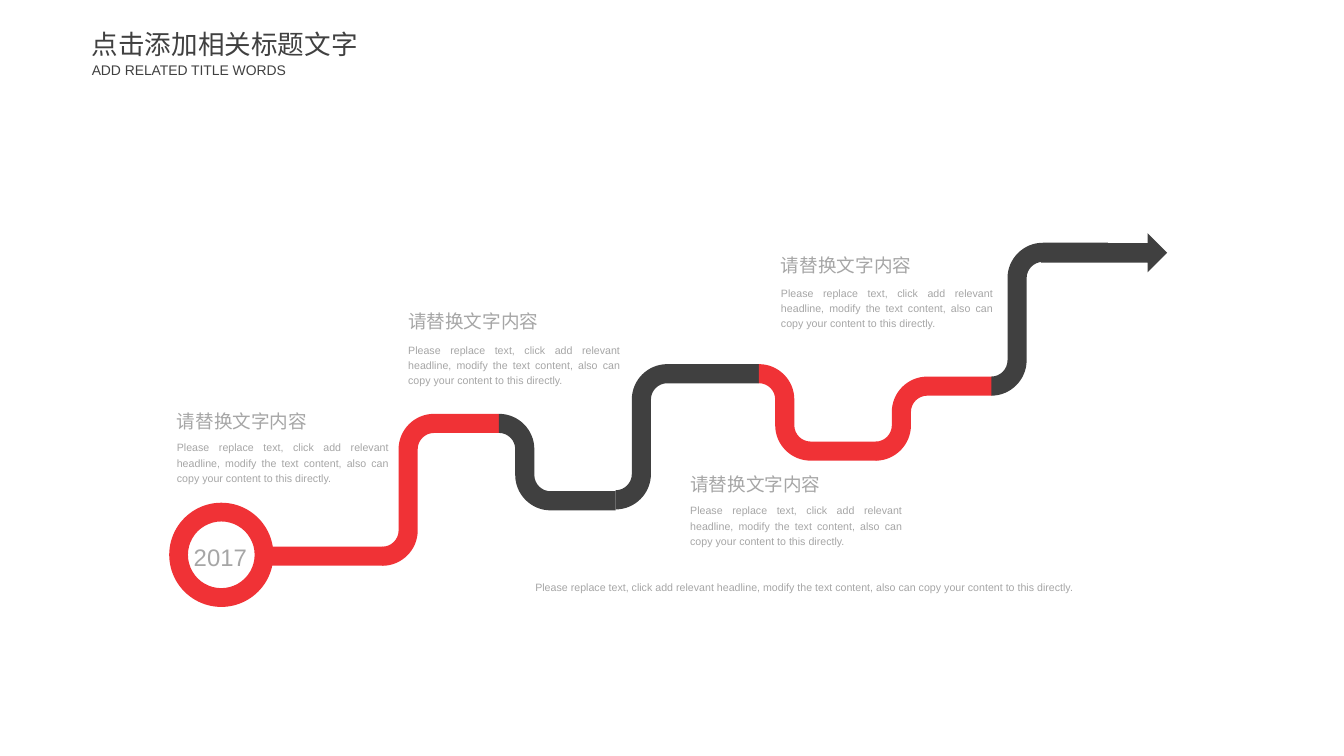
"""Build the roadmap slide with its winding road, year marker and milestones."""
import math
from typing import NamedTuple

from pptx import Presentation
from pptx import util as u
from pptx.dml.color import RGBColor
from pptx.enum import shapes, text
from pptx.oxml import ns

RED, DARK, GREY = "F03236", "404040", "A6A6A6"
ROAD_WIDTH = 0.2
BEND_RADIUS = 0.27
CURVE = 0.55
ENTRY_ARC = [(0, 0), (CURVE, 0), (1, 1 - CURVE), (1, 1)]
EXIT_ARC = [(0, 0), (0, CURVE), (1 - CURVE, 1), (1, 1)]
CURVE_STARTS = (0, 4, 10, 14)
HEADING = "请替换文字内容"
DETAIL = (
    "Please replace text, click add relevant headline, modify the text content, "
    "also can copy your content to this directly."
)


class Bend(NamedTuple):
    left: float
    start_y: float
    end_y: float
    right: float
    colour: str


class Milestone(NamedTuple):
    left: float
    heading_top: float
    heading_width: float
    detail_top: float


BENDS = [
    Bend(6.44, 5.23, 3.91, 7.94, DARK),
    Bend(9.16, 4.72, 4.04, 10.38, RED),
    Bend(7.94, 3.91, 4.72, 9.17, RED),
    Bend(4.0, 5.82, 4.43, 5.22, RED),
    Bend(5.22, 4.43, 5.24, 6.44, DARK),
    Bend(10.37, 4.04, 2.64, 11.59, DARK),
]
MILESTONES = [
    Milestone(4.27, 3.2, 1.83, 3.57),
    Milestone(7.22, 4.9, 1.91, 5.25),
    Milestone(8.17, 2.61, 1.97, 2.97),
    Milestone(1.85, 4.24, 1.75, 4.59),
]


def paint(shape, colour: str) -> None:
    shape.fill.solid()
    shape.fill.fore_color.rgb = RGBColor.from_string(colour)
    shape.line.fill.background()
    shape.shadow.inherit = False


def bend_edge(bend: Bend, offset: float) -> list[tuple[float, float]]:
    turn = math.copysign(1, bend.end_y - bend.start_y)
    first, second = BEND_RADIUS + offset, BEND_RADIUS - offset
    entry_y = bend.start_y - turn * offset
    exit_x = bend.left + first
    exit_y = bend.end_y - turn * BEND_RADIUS
    entry = [(bend.left + first * x, entry_y + turn * first * y) for x, y in ENTRY_ARC]
    leaving = [(exit_x + second * x, exit_y + turn * second * y) for x, y in EXIT_ARC]
    return entry + leaving + [(bend.right, leaving[-1][1])]


def round_corners(road) -> None:
    outline = next(road._element.iter(ns.qn("a:path")))
    segments = outline.findall(ns.qn("a:lnTo"))
    for start in CURVE_STARTS:
        corner = segments[start:start + 3]
        curve = outline.makeelement(ns.qn("a:cubicBezTo"))
        corner[0].addprevious(curve)
        for segment in corner:
            curve.append(segment[0])
            outline.remove(segment)


def draw_bend(slide, bend: Bend) -> None:
    near, far = (bend_edge(bend, side * ROAD_WIDTH / 2) for side in (1, -1))
    outline = [(u.Inches(x), u.Inches(y)) for x, y in near + far[::-1]]
    builder = slide.shapes.build_freeform(*outline[0])
    builder.add_line_segments(outline[1:], close=True)
    road = builder.convert_to_shape()
    round_corners(road)
    paint(road, bend.colour)


def draw_preset(slide, kind, box: tuple, colour: str):
    shape = slide.shapes.add_shape(kind, *map(u.Inches, box))
    paint(shape, colour)
    return shape


def write(slide, words: str, box: tuple, *, size: float = 8, colour: str = GREY,
          align=text.PP_ALIGN.LEFT, anchor=text.MSO_ANCHOR.TOP,
          spacing: float = 1.2, wrap: bool = True, holder=None) -> None:
    left, top, width, height = map(u.Inches, box)
    if holder is None:
        holder = slide.shapes.add_textbox(left, top, width, height)
    else:
        holder.left, holder.top, holder.width, holder.height = left, top, width, height
    frame = holder.text_frame
    frame.margin_left = frame.margin_right = frame.margin_top = frame.margin_bottom = 0
    frame.word_wrap = wrap
    frame.auto_size = text.MSO_AUTO_SIZE.SHAPE_TO_FIT_TEXT
    frame.vertical_anchor = anchor
    paragraph = frame.paragraphs[0]
    paragraph.alignment = align
    paragraph.line_spacing = spacing
    run = paragraph.add_run()
    run.text = words
    run.font.size = u.Pt(size)
    run.font.name = "Arial"
    run.font.color.rgb = RGBColor.from_string(colour)


def draw_milestone(slide, milestone: Milestone) -> None:
    left, heading_top, heading_width, detail_top = milestone
    write(slide, HEADING, (left, heading_top, heading_width, 0.28), size=14)
    write(slide, DETAIL, (left, detail_top, 2.22, 0.48),
          align=text.PP_ALIGN.JUSTIFY, anchor=text.MSO_ANCHOR.MIDDLE)


def main() -> None:
    deck = Presentation()
    deck.slide_width, deck.slide_height = u.Inches(14.06), u.Inches(7.91)
    slide = deck.slides.add_slide(deck.slide_layouts[5])

    write(slide, "点击添加相关标题文字", (0.96, 0.29, 2.8, 0.34), size=20, colour=DARK,
          spacing=1.0, wrap=False, holder=slide.shapes.title)
    write(slide, "ADD RELATED TITLE WORDS", (0.96, 0.64, 2.08, 0.18), size=10.5,
          colour=DARK, spacing=1.0, wrap=False)

    for bend in BENDS:
        draw_bend(slide, bend)
    preset = shapes.MSO_SHAPE
    year_ring = draw_preset(slide, preset.DONUT, (1.77, 5.26, 1.09, 1.09), RED)
    year_ring.adjustments[0] = 0.18
    write(slide, "2017", (1.85, 5.62, 0.91, 0.36), size=18, align=text.PP_ALIGN.CENTER)
    draw_preset(slide, preset.RECTANGLE, (2.84, 5.72, 1.17, ROAD_WIDTH), RED)
    draw_preset(slide, preset.RIGHT_ARROW, (10.89, 2.44, 1.32, 0.41), DARK)

    write(slide, DETAIL, (5.6, 6.05, 6.76, 0.15), align=text.PP_ALIGN.JUSTIFY)
    for milestone in MILESTONES:
        draw_milestone(slide, milestone)

    deck.save("out.pptx")


if __name__ == "__main__":
    main()
